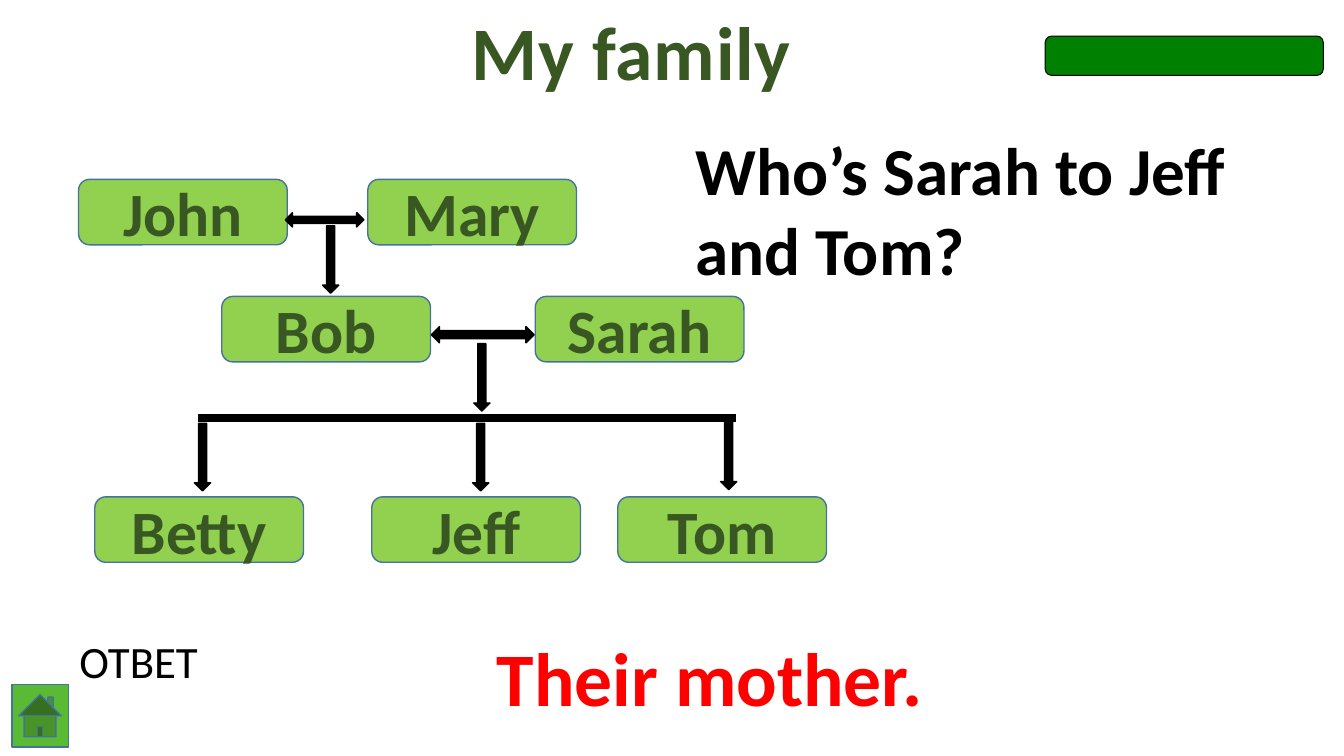
import pptx
import pptx.dml.color
import pptx.enum.shapes
import pptx.enum.text
import pptx.oxml.ns
import pptx.util
from lxml import etree

Cm = pptx.util.Cm
RGBColor = pptx.dml.color.RGBColor
SHAPE = pptx.enum.shapes.MSO_SHAPE
ALIGN = pptx.enum.text.PP_ALIGN

BLACK = RGBColor(0x00, 0x00, 0x00)
RED = RGBColor(0xFF, 0x00, 0x00)
DARK_GREEN = RGBColor(0x38, 0x57, 0x23)
BAR_GREEN = RGBColor(0x00, 0x80, 0x00)
HOME_GREEN = RGBColor(0x5A, 0xBA, 0x34)
LIME = RGBColor(0x92, 0xD0, 0x50)
BLUE = RGBColor(0x43, 0x73, 0x9E)


class FamilySlide:
    font = "Calibri"

    def __init__(self, page):
        self.page = page

    def add_lines(self, frame, lines, size, color, bold=True, align=ALIGN.LEFT, spacing=0):
        for index, line in enumerate(lines):
            para = frame.add_paragraph() if index else frame.paragraphs[0]
            para.alignment = align
            span = para.add_run()
            span.text = line
            span.font.name = self.font
            span.font.size = pptx.util.Pt(size)
            span.font.bold = bold
            span.font.color.rgb = color
            if spacing:
                span.font._element.set("spc", str(spacing))

    def text(self, left, top, width, height, lines, size, color, wrap=True, **style):
        box = self.page.shapes.add_textbox(Cm(left), Cm(top), Cm(width), Cm(height))
        box.text_frame.word_wrap = wrap
        box.text_frame.auto_size = pptx.enum.text.MSO_AUTO_SIZE.SHAPE_TO_FIT_TEXT
        self.add_lines(box.text_frame, lines, size, color, **style)

    def shape(self, kind, left, top, width, height, fill, line, weight=1):
        box = self.page.shapes.add_shape(kind, Cm(left), Cm(top), Cm(width), Cm(height))
        box.shadow.inherit = False
        box.fill.solid()
        box.fill.fore_color.rgb = fill
        box.line.color.rgb = line
        box.line.width = pptx.util.Pt(weight)
        return box

    def person(self, name, left, top):
        box = self.shape(SHAPE.ROUNDED_RECTANGLE, left, top, 5.26, 1.65, LIME, BLUE)
        box.text_frame.word_wrap = True
        box.text_frame.vertical_anchor = pptx.enum.text.MSO_ANCHOR.MIDDLE
        self.add_lines(box.text_frame, [name], 44, DARK_GREEN, align=ALIGN.CENTER)

    def marriage(self, left, top, width, height):
        self.shape(SHAPE.LEFT_RIGHT_ARROW, left, top, width, height, BLACK, BLACK)

    def descent(self, left, top):
        self.shape(SHAPE.DOWN_ARROW, left, top, 0.41, 1.7, BLACK, BLACK)

    def branch(self, left, right, top):
        line = self.page.shapes.add_connector(
            pptx.enum.shapes.MSO_CONNECTOR.STRAIGHT, Cm(left), Cm(top), Cm(right), Cm(top))
        line.line.color.rgb = BLACK
        line.line.width = pptx.util.Pt(6)
        etree.SubElement(line._element.spPr, pptx.oxml.ns.qn("a:effectLst"))


def main():
    deck = pptx.Presentation()
    deck.slide_width, deck.slide_height = Cm(33.87), Cm(19.05)
    family = FamilySlide(deck.slides.add_slide(deck.slide_layouts[6]))

    family.text(1.75, 15.85, 4.19, 1.63, ["ОТВЕТ"], 32, BLACK, bold=False)
    family.text(12.27, 15.77, 13.16, 2.57, ["Their mother."], 54, RED)
    family.shape(SHAPE.FLOWCHART_ALTERNATE_PROCESS, 26.34, 0.91, 7.01, 0.99,
                 BAR_GREEN, BLACK, 0.75)
    family.shape(SHAPE.ACTION_BUTTON_HOME, 0.3, 17.25, 1.42, 1.57, HOME_GREEN, BLUE)
    family.text(11.58, 0, 8.66, 2.57, ["My family"], 54, DARK_GREEN,
                wrap=False, align=ALIGN.CENTER, spacing=50)

    generations = [
        (4.52, [("John", 1.98), ("Mary", 9.27)]),
        (7.47, [("Bob", 5.59), ("Sarah", 13.49)]),
        (12.52, [("Betty", 2.39), ("Jeff", 9.37), ("Tom", 15.57)]),
    ]
    for top, people in generations:
        for name, left in people:
            family.person(name, left, top)

    family.marriage(7.19, 5.36, 1.98, 0.36)
    family.marriage(10.87, 8.23, 2.59, 0.41)
    family.branch(4.98, 18.54, 10.54)
    for left, top in [(8.13, 5.69), (11.94, 8.66), (4.9, 10.67), (11.91, 10.67), (18.16, 10.64)]:
        family.descent(left, top)

    family.text(17.27, 3.1, 14.45, 4.37, ["Who’s Sarah to Jeff", "and Tom?"], 48, BLACK,
                wrap=False)
    deck.save("out.pptx")


if __name__ == "__main__":
    main()
